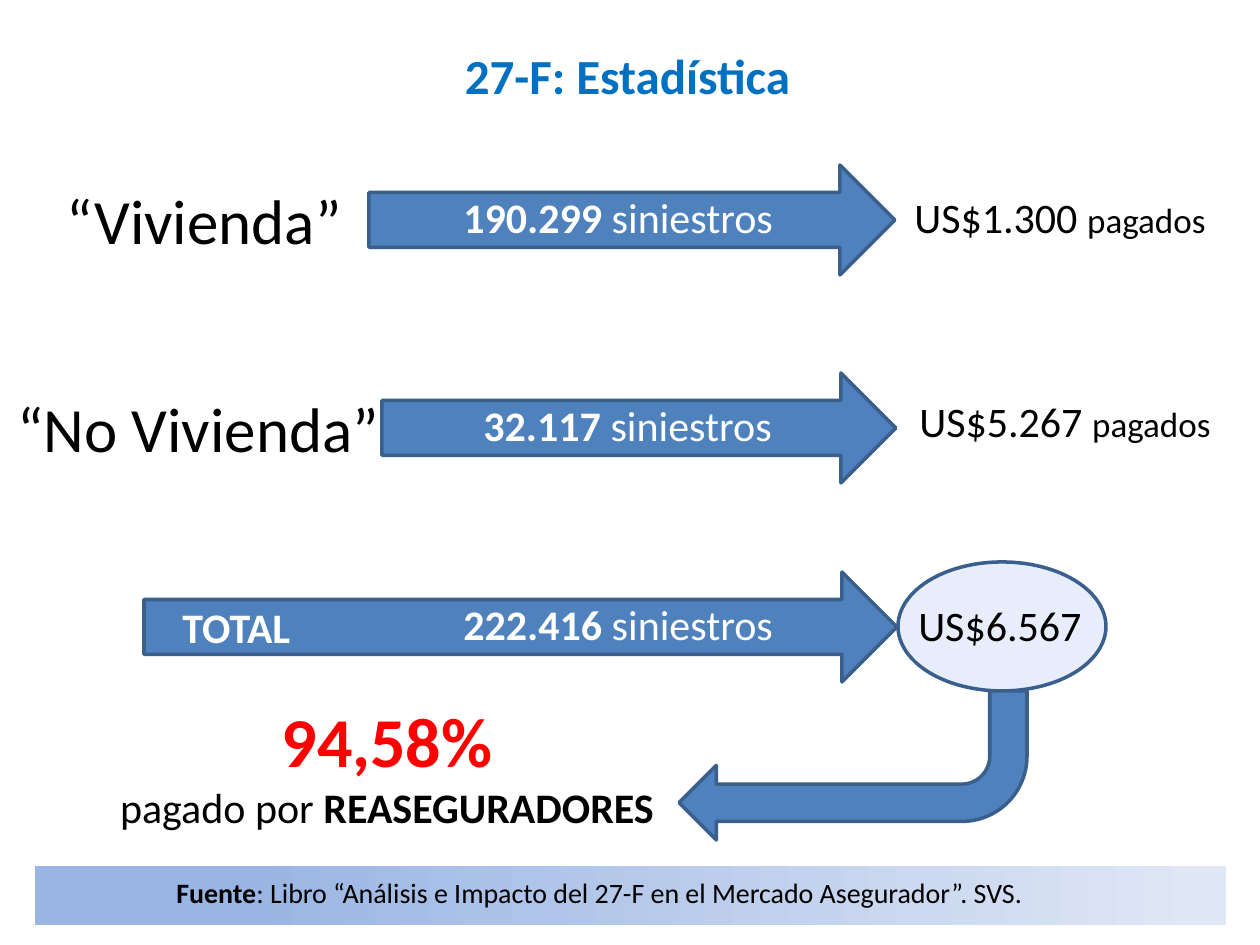
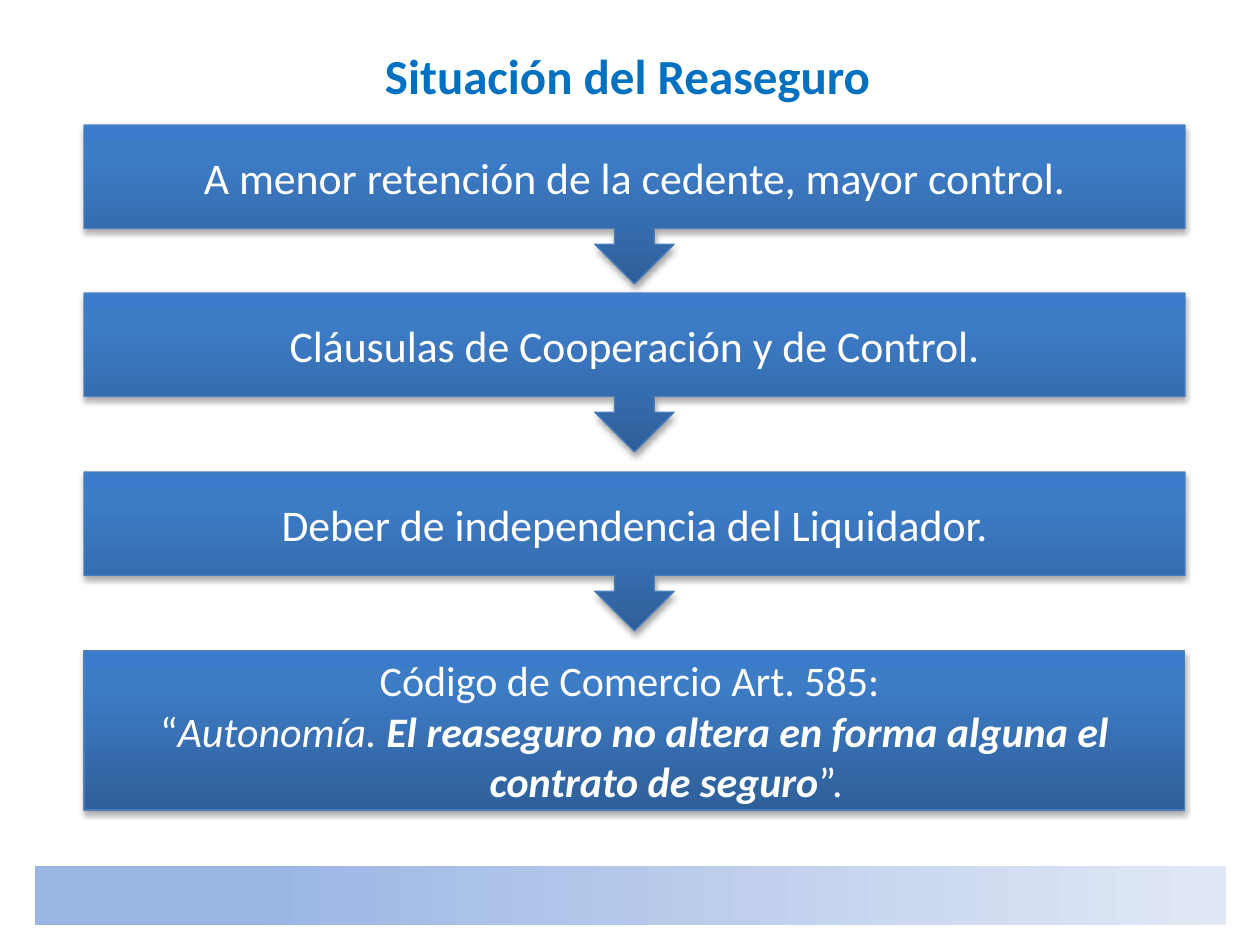
import pptx
import pptx.util
import pptx.dml.color
import pptx.enum.shapes
import pptx.enum.text
import pptx.oxml.ns
import lxml.etree

KIND = pptx.enum.shapes.MSO_SHAPE
ALIGN = pptx.enum.text.PP_ALIGN
qn = pptx.oxml.ns.qn
PX = 914400 // 126
FONT = "Calibri"
BLACK, WHITE, RED = "000000", "FFFFFF", "FF0000"
TITLE, BLUE, EDGE, RIM, GLOW = "0070C0", "4F81BD", "3A5F8C", "4B7EBC", "2457E8"
BAND = [(17, "9AB5E4"), (100, "E1E8F5")]
STEEL = [(0, "2F5F99"), (80, "3D7CC7"), (100, "3A7CCB")]

# A run is (text, size, colour, style); style holds "b" and/or "i".
ARROWS = [(369, 165, 526, 110), (382, 373, 514, 110), (144, 572, 753, 110)]
RING = (898, 562, 208, 129)
BEND = (679, 691, 348, 149)
LABELS = [
    ((54, 175, 302, 89), [("“Vivienda”", 36, BLACK, "")]),
    ((5, 383, 389, 89), [("“No Vivienda”", 36, BLACK, "")]),
    ((170, 595, 135, 63), [("TOTAL", 24, WHITE, "b")]),
    ((451, 185, 338, 63), [("190.299 ", 24, WHITE, "b"), ("siniestros", 24, WHITE, "")]),
    ((471, 393, 321, 63), [("32.117 ", 24, WHITE, "b"), ("siniestros", 24, WHITE, "")]),
    ((451, 592, 338, 63), [("222.416 ", 24, WHITE, "b"), ("siniestros", 24, WHITE, "")]),
    ((902, 185, 319, 63), [("US$1.300 ", 24, BLACK, ""), ("pagados", 20, BLACK, "")]),
    ((907, 389, 319, 63), [("US$5.267 ", 24, BLACK, ""), ("pagados", 20, BLACK, "")]),
    ((906, 593, 190, 63), [("US$6.567", 24, BLACK, "")]),
    ((164, 869, 874, 47), [
        ("Fuente", 16, BLACK, "b"),
        (": Libro “Análisis e Impacto del 27-F en el Mercado Asegurador”. SVS.", 16, BLACK, "")]),
]
SHARE = [
    [("94,58%", 40, RED, "b")],
    [("pagado por ", 24, BLACK, ""), ("REASEGURADORES", 24, BLACK, "b")],
]
STEPS = [
    (125, KIND.DOWN_ARROW_CALLOUT,
     [[("A menor retención de la cedente, mayor control.", 25, WHITE, "")]]),
    (293, KIND.DOWN_ARROW_CALLOUT,
     [[("Cláusulas de Cooperación y de Control.", 25, WHITE, "")]]),
    (472, KIND.DOWN_ARROW_CALLOUT,
     [[("Deber de independencia del Liquidador.", 25, WHITE, "")]]),
    (651, KIND.RECTANGLE, [
        [("Código de Comercio Art. 585: ", 24, WHITE, "")],
        [("“", 24, WHITE, ""), ("Autonomía. ", 24, WHITE, "i"),
         ("El reaseguro no altera en forma alguna el contrato de seguro", 24, WHITE, "bi"),
         ("”. ", 24, WHITE, "")]]),
]


def rgb(code):
    return pptx.dml.color.RGBColor.from_string(code)


def scale(box):
    return [n * PX for n in box]


def sub(node, tag, **attrs):
    child = lxml.etree.SubElement(node, qn(tag))
    for key, val in attrs.items():
        child.set(key, str(val))
    return child


def tint(node, code, alpha=100):
    """Add a colour, see-through when alpha is below 100."""
    color = sub(node, "a:srgbClr", val=code)
    if alpha < 100:
        sub(color, "a:alpha", val=alpha * 1000)


def blend(shape, stops, angle):
    shape.fill.gradient()
    shape.fill.gradient_angle = angle
    stack = shape._element.spPr.find(".//" + qn("a:gsLst"))
    for old in list(stack):
        stack.remove(old)
    for place, code in stops:
        tint(sub(stack, "a:gs", pos=place * 1000), code)


def shade(shape):
    """Cast a soft shadow straight down."""
    effects = shape._element.spPr.find(qn("a:effectLst"))
    cast = sub(effects, "a:outerShdw", blurRad=39370, dist=22860,
               dir=5400000, rotWithShape=0)
    tint(cast, BLACK, 35)


def draw(slide, kind, box, fill=None, edge=None, width=2):
    shape = slide.shapes.add_shape(kind, *scale(box))
    shape.shadow.inherit = False
    if fill:
        shape.fill.solid()
        shape.fill.fore_color.rgb = rgb(fill)
    if edge:
        shape.line.color.rgb = rgb(edge)
        shape.line.width = pptx.util.Pt(width)
    else:
        shape.line.fill.background()
    return shape


def write(frame, paras, align=None, hang=0):
    for i, runs in enumerate(paras):
        para = frame.add_paragraph() if i else frame.paragraphs[0]
        para.alignment = align
        if hang:
            props = para._p.get_or_add_pPr()
            props.set("marL", str(hang * PX))
            props.set("indent", str(-hang * PX))
        for text, size, color, style in runs:
            run = para.add_run()
            run.text = text
            run.font.name = FONT
            run.font.size = pptx.util.Pt(size)
            run.font.color.rgb = rgb(color)
            run.font.bold = "b" in style
            run.font.italic = "i" in style


def label(slide, box, paras, align=None, wrap=False):
    frame = slide.shapes.add_textbox(*scale(box)).text_frame
    frame.word_wrap = wrap
    write(frame, paras, align)
    return frame


def start(deck, title):
    """Add a slide with the shared band and title."""
    slide = deck.slides.add_slide(deck.slide_layouts[6])
    blend(draw(slide, KIND.RECTANGLE, (35, 866, 1191, 59)), BAND, 0)
    frame = label(slide, (-5, -4, 1265, 158), [[(title, 28, TITLE, "b")]],
                  ALIGN.CENTER, True)
    frame.vertical_anchor = pptx.enum.text.MSO_ANCHOR.MIDDLE
    return slide


def stats(deck):
    slide = start(deck, "27-F: Estadística")
    for box in ARROWS:
        draw(slide, KIND.RIGHT_ARROW, box, BLUE, EDGE)
    ring = draw(slide, KIND.OVAL, RING, GLOW, EDGE)
    glow = ring._element.spPr.find(qn("a:solidFill")).find(qn("a:srgbClr"))
    sub(glow, "a:alpha", val=10000)
    draw(slide, KIND.BENT_ARROW, BEND, BLUE, EDGE).rotation = 180
    for box, runs in LABELS:
        label(slide, box, [runs])
    label(slide, (35, 691, 704, 149), SHARE, ALIGN.CENTER, True)


def steps(deck):
    slide = start(deck, "Situación del Reaseguro")
    for top, kind, paras in STEPS:
        step = draw(slide, kind, (84, top, 1101, 159), edge=RIM, width=0.75)
        blend(step, STEEL, 90)
        shade(step)
        step.text_frame.word_wrap = True
        step.text_frame.vertical_anchor = pptx.enum.text.MSO_ANCHOR.MIDDLE
        write(step.text_frame, paras, ALIGN.CENTER, 73)


def main():
    deck = pptx.Presentation()
    deck.slide_width, deck.slide_height = scale((1260, 945))
    stats(deck)
    steps(deck)
    deck.save("out.pptx")


if __name__ == "__main__":
    main()
